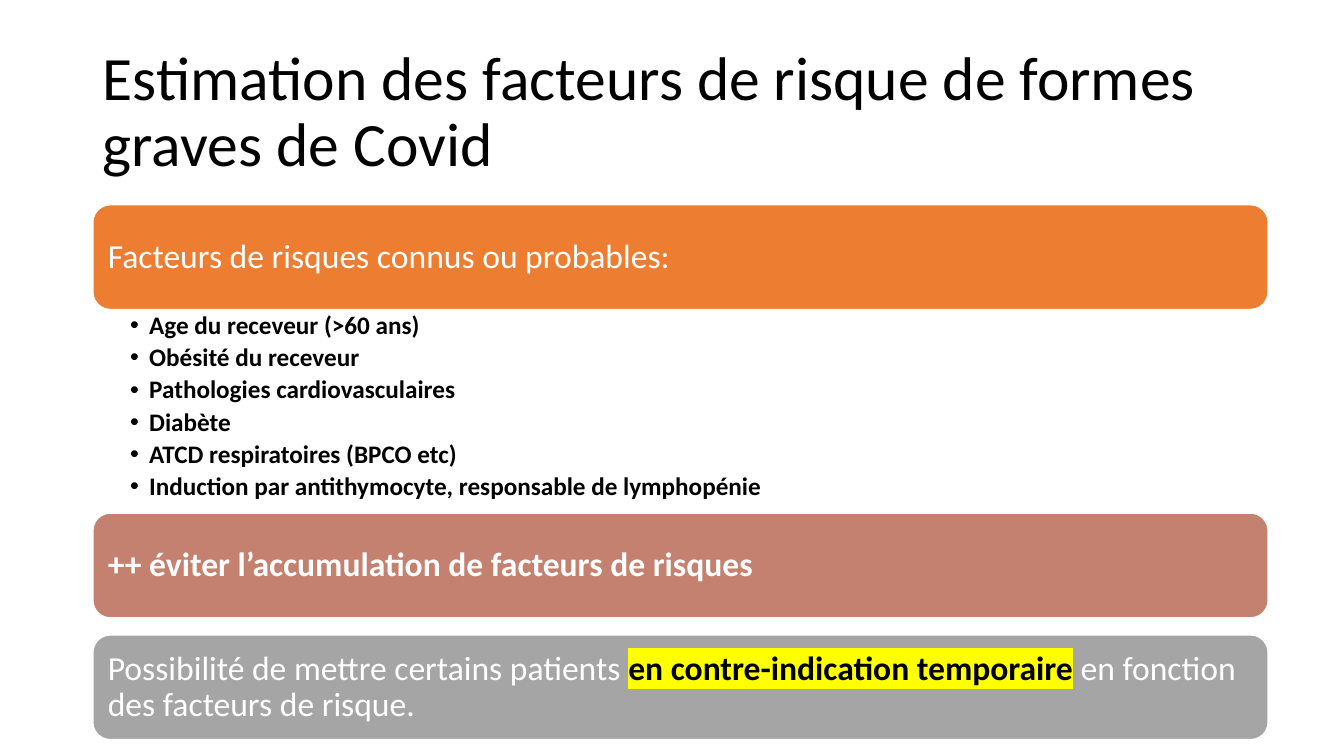
from dataclasses import dataclass

from lxml.etree import SubElement
from pptx import Presentation
from pptx.dml.color import RGBColor as RGB
from pptx.enum.shapes import MSO_SHAPE as Shape
from pptx.enum.text import MSO_ANCHOR as Anchor, PP_ALIGN as Align
from pptx.oxml.ns import qn
from pptx.util import Cm, Pt


@dataclass(frozen=True)
class Theme:
    font: str = "Calibri"
    black: str = "000000"
    white: str = "FFFFFF"
    orange: str = "ED7D31"
    terracotta: str = "C48170"
    grey: str = "A5A5A5"
    yellow: str = "FFFF00"
    title_size: float = 44
    banner_size: float = 24
    bullet_size: float = 18
    line_spacing: float = 0.9
    bullet_gap: float = 3.6


class SlideBuilder:
    def __init__(self, prs, theme):
        self.theme = theme
        self.slide = prs.slides.add_slide(prs.slide_layouts[6])

    def _frame(self, sp, anchor, insets):
        """Set wrapping, anchor and the left, top, right, bottom insets in cm."""
        tf = sp.text_frame
        sides = ("margin_left", "margin_top", "margin_right", "margin_bottom")
        fmt = {"word_wrap": True, "vertical_anchor": anchor}
        fmt.update(zip(sides, map(Cm, insets)))
        for name, value in fmt.items():
            setattr(tf, name, value)
        return tf

    def _write(self, p, runs, size):
        """Fill a paragraph with (text, colour, bold, highlight) runs."""
        p.alignment = Align.LEFT
        p.line_spacing = self.theme.line_spacing
        for text, color, bold, highlight in runs:
            r = p.add_run()
            r.text = text
            fmt = {"name": self.theme.font, "size": Pt(size), "bold": bold}
            for name, value in fmt.items():
                setattr(r.font, name, value)
            r.font.color.rgb = RGB.from_string(color)
            if highlight:
                mark = SubElement(r.font._element, qn("a:highlight"))
                SubElement(mark, qn("a:srgbClr"), val=highlight)
                r.font._element.find(qn("a:solidFill")).addnext(mark)

    def title(self, text, box):
        sp = self.slide.shapes.add_textbox(*map(Cm, box))
        tf = self._frame(sp, Anchor.MIDDLE, (0.25, 0.13, 0.25, 0.13))
        self._write(tf.paragraphs[0], [(text, self.theme.black, False, None)],
                    self.theme.title_size)

    def banner(self, runs, fill, box):
        sp = self.slide.shapes.add_shape(Shape.ROUNDED_RECTANGLE, *map(Cm, box))
        sp.shadow.inherit = False
        sp.fill.solid()
        sp.fill.fore_color.rgb = RGB.from_string(fill)
        sp.line.color.rgb = RGB.from_string(self.theme.white)
        sp.line.width = Pt(1)
        tf = self._frame(sp, Anchor.MIDDLE, (0.25,) * 4)
        self._write(tf.paragraphs[0], runs, self.theme.banner_size)

    def bullets(self, items, box):
        sp = self.slide.shapes.add_textbox(*map(Cm, box))
        tf = self._frame(sp, Anchor.TOP, (0.94, 0.08, 0.36, 0.08))
        indent = Cm(0.48)
        for i, item in enumerate(items):
            p = tf.add_paragraph() if i else tf.paragraphs[0]
            self._write(p, [(item, self.theme.black, True, None)],
                        self.theme.bullet_size)
            p.space_after = Pt(self.theme.bullet_gap)
            pPr = p._p.get_or_add_pPr()
            pPr.set("marL", str(indent))
            pPr.set("indent", str(-indent))
            SubElement(pPr, qn("a:buFont"), typeface="Arial")
            SubElement(pPr, qn("a:buChar"), char="•")


def main():
    prs = Presentation()
    prs.slide_width, prs.slide_height = Cm(33.87), Cm(19.05)
    theme = Theme()
    s = SlideBuilder(prs, theme)

    left, width = 2.34, 29.62
    banner_height, list_height, gap = 2.64, 5.13, 0.43
    known_top = 5.16
    list_top = known_top + banner_height
    avoid_top = list_top + list_height
    pause_top = avoid_top + banner_height + gap

    s.title("Estimation des facteurs de risque de formes graves de Covid",
            (left, 1.02, 29.21, 3.68))
    s.bullets([
        "Age du receveur (>60 ans)",
        "Obésité du receveur",
        "Pathologies cardiovasculaires",
        "Diabète",
        "ATCD respiratoires (BPCO etc)",
        "Induction par antithymocyte, responsable de lymphopénie",
    ], (left, list_top, width, list_height))

    banners = [
        (known_top, theme.orange, [
            ("Facteurs de risques connus ou probables:", theme.white, False, None),
        ]),
        (avoid_top, theme.terracotta, [
            ("++ éviter l’accumulation de facteurs de risques", theme.white, True, None),
        ]),
        (pause_top, theme.grey, [
            ("Possibilité de mettre certains patients ", theme.white, False, None),
            ("en contre-indication temporaire", theme.black, True, theme.yellow),
            (" en fonction des facteurs de risque.", theme.white, False, None),
        ]),
    ]
    for top, fill, runs in banners:
        s.banner(runs, fill, (left, top, width, banner_height))

    prs.save("out.pptx")


if __name__ == "__main__":
    main()
